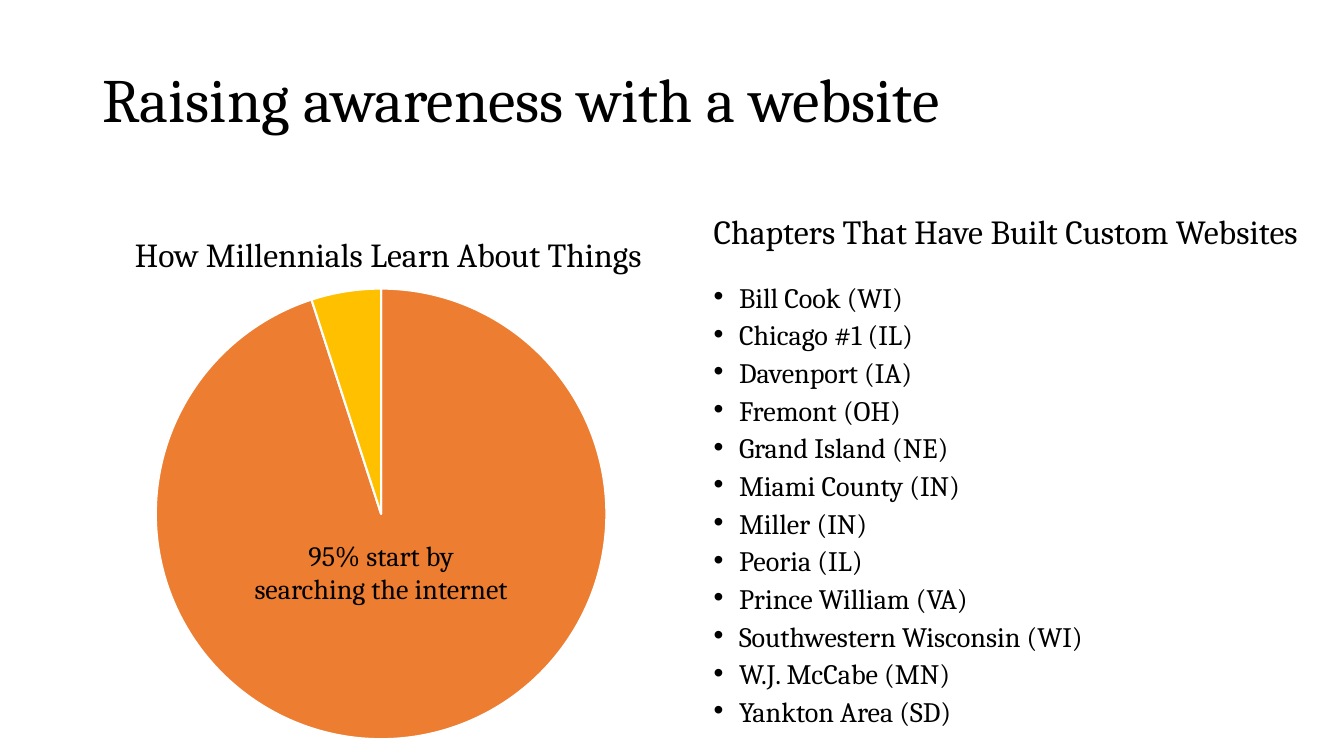
from lxml import etree
from pptx import Presentation
from pptx import oxml
from pptx.chart import data as chart_data
from pptx.dml import color as dml
from pptx.enum import chart as charts, text
from pptx.util import Cm, Pt

COLORS = {"text": "000000", "background": "FFFFFF", "internet": "ED7D31",
          "other": "FFC000", "third": "70AD47", "fourth": "9E480E"}
FONT = "Cambria"
CHAPTERS = ["Bill Cook (WI)", "Chicago #1 (IL)", "Davenport (IA)", "Fremont (OH)",
            "Grand Island (NE)", "Miami County (IN)", "Miller (IN)", "Peoria (IL)",
            "Prince William (VA)", "Southwestern Wisconsin (WI)", "W.J. McCabe (MN)",
            "Yankton Area (SD)"]


def rgb(name):
    """Return the named colour."""
    return dml.RGBColor.from_string(COLORS[name])


def apply_format(target, values):
    """Set each attribute in values on the target."""
    for name, value in values.items():
        setattr(target, name, value)


def format_font(font, size):
    """Give a font the slide's typeface, size and colour."""
    apply_format(font, {"name": FONT, "size": Pt(size), "bold": False})
    font.color.rgb = rgb("text")


def set_bullet(paragraph, character=None):
    """Give a paragraph a hanging bullet, or remove its bullet."""
    properties = paragraph._p.get_or_add_pPr()
    indent = Cm(0.64) if character else 0
    properties.set("marL", str(indent))
    properties.set("indent", str(-indent))
    if character:
        font = etree.SubElement(properties, oxml.ns.qn("a:buFont"))
        font.set("typeface", "Arial")
        bullet = etree.SubElement(properties, oxml.ns.qn("a:buChar"))
        bullet.set("char", character)
    else:
        etree.SubElement(properties, oxml.ns.qn("a:buNone"))


def write_line(paragraph, line, size, values):
    """Write one formatted line into a paragraph."""
    apply_format(paragraph, values)
    run = paragraph.add_run()
    run.text = line
    format_font(run.font, size)


def place(shape, box):
    """Move a shape to a box of left, top, width and height."""
    apply_format(shape, dict(zip(("left", "top", "width", "height"), box)))


def add_title(slide, box):
    """Fill the title placeholder."""
    title = slide.shapes.title
    place(title, box)
    frame = title.text_frame
    apply_format(frame, {"vertical_anchor": text.MSO_ANCHOR.MIDDLE, "word_wrap": True,
                         "auto_size": text.MSO_AUTO_SIZE.NONE})
    write_line(frame.paragraphs[0], "Raising awareness with a website", 44,
               {"alignment": text.PP_ALIGN.LEFT, "line_spacing": 0.9})


def add_chapters(slide, box):
    """Fill the body placeholder with a heading and the chapter list."""
    body = slide.placeholders[1]
    place(body, box)
    frame = body.text_frame
    apply_format(frame, {"word_wrap": True, "auto_size": text.MSO_AUTO_SIZE.NONE,
                         "vertical_anchor": text.MSO_ANCHOR.TOP})
    heading = frame.paragraphs[0]
    set_bullet(heading)
    write_line(heading, "Chapters That Have Built Custom Websites", 24.1,
               {"line_spacing": 0.7, "space_before": Pt(0)})
    for index, chapter in enumerate(CHAPTERS):
        paragraph = frame.add_paragraph()
        set_bullet(paragraph, "•")
        write_line(paragraph, chapter, 20.1,
                   {"line_spacing": 0.7, "space_before": Pt(10 if index else 28)})


def set_layout(element, values):
    """Fix a chart element's position as fractions of the chart."""
    layout = element.find(oxml.ns.qn("c:layout"))
    if layout is None:
        layout = oxml.parse_xml(f"<c:layout {oxml.ns.nsdecls('c')}/>")
        text_element = element.find(oxml.ns.qn("c:tx"))
        element.insert(0 if text_element is None else 1, layout)
    manual = etree.SubElement(layout, oxml.ns.qn("c:manualLayout"))
    for name, value in values.items():
        etree.SubElement(manual, oxml.ns.qn(f"c:{name}")).set("val", str(value))


def add_pie(slide, box):
    """Add the pie chart and the label over its large slice."""
    shares = chart_data.CategoryChartData()
    shares.categories = ["1", "2", "3", "4"]
    shares.add_series("Series 1", [95, 5, None, None])
    chart = slide.shapes.add_chart(charts.XL_CHART_TYPE.PIE, *box, shares).chart
    apply_format(chart, {"has_legend": False, "has_title": True})
    format_font(chart.font, 10)
    write_line(chart.chart_title.text_frame.paragraphs[0],
               "How Millennials Learn About Things", 24, {})
    chart.chart_title.include_in_layout = False
    plot = chart.plots[0]
    plot.vary_by_categories = True
    for index, name in enumerate(("internet", "other", "third", "fourth")):
        point = plot.series[0].points[index].format
        point.fill.solid()
        point.fill.fore_color.rgb = rgb(name)
        point.line.color.rgb = rgb("background")
        point.line.width = Pt(1.5)
    edges = {"xMode": "edge", "yMode": "edge"}
    set_layout(chart.chart_title._element, {**edges, "x": 0.22, "y": 0.05})
    plot_area = chart._chartSpace.chart.plotArea
    set_layout(plot_area, {"layoutTarget": "inner", **edges,
                           "x": 0.25, "y": 0.16, "w": 0.5, "h": 0.81})

    left, top, width, height = box
    label_width = Cm(7.19)
    label = slide.shapes.add_textbox(left + (width - label_width) // 2, top + Cm(8.41),
                                     label_width, Cm(1.96))
    frame = label.text_frame
    apply_format(frame, {"word_wrap": False,
                         "auto_size": text.MSO_AUTO_SIZE.SHAPE_TO_FIT_TEXT})
    for index, line in enumerate(("95% start by", "searching the internet")):
        paragraph = frame.add_paragraph() if index else frame.paragraphs[0]
        write_line(paragraph, line, 20, {"alignment": text.PP_ALIGN.CENTER})


def main():
    """Build and save the presentation."""
    presentation = Presentation()
    apply_format(presentation, {"slide_width": Cm(33.87), "slide_height": Cm(19.05)})
    slide = presentation.slides.add_slide(presentation.slide_layouts[1])
    add_title(slide, (Cm(2.33), Cm(1.01), Cm(29.21), Cm(3.15)))
    add_chapters(slide, (Cm(17.73), Cm(5.46), Cm(15.82), Cm(13.16)))
    add_pie(slide, (Cm(-1.75), Cm(5.03), Cm(22.71), Cm(14.02)))
    presentation.save("out.pptx")


if __name__ == "__main__":
    main()
